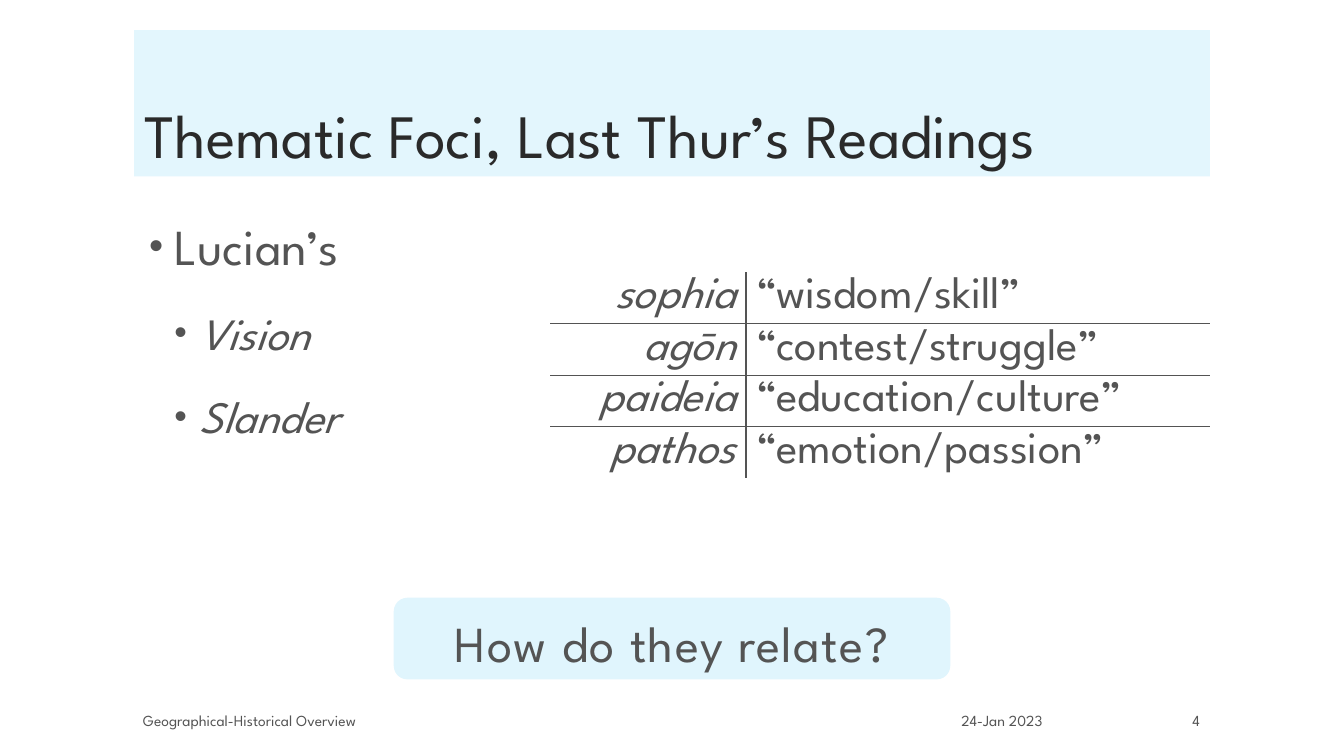
from lxml import etree
from pptx import Presentation
from pptx.dml.color import RGBColor
from pptx.enum.shapes import MSO_SHAPE
from pptx.enum.text import MSO_ANCHOR, MSO_AUTO_SIZE, PP_ALIGN
from pptx.oxml.ns import qn
from pptx.util import Inches, Pt

TITLE = "Thematic Foci, Last Thur’s Readings"
READINGS = [("Lucian’s", 0), ("Vision", 1), ("Slander", 1)]
TERMS = [
    ("sophia", "“wisdom/skill”"),
    ("agōn", "“contest/struggle”"),
    ("paideia", "“education/culture”"),
    ("pathos", "“emotion/passion”"),
]
QUESTION = "How do they relate?"

LEFT, RIGHT = PP_ALIGN.LEFT, PP_ALIGN.RIGHT
CENTER = PP_ALIGN.CENTER
TOP, MIDDLE, BOTTOM = MSO_ANCHOR.TOP, MSO_ANCHOR.MIDDLE, MSO_ANCHOR.BOTTOM
RECTANGLE_ROUNDED = MSO_SHAPE.ROUNDED_RECTANGLE
NO_FIT = MSO_AUTO_SIZE.NONE

FONT = "League Spartan"
GREY = RGBColor(0x54, 0x54, 0x54)
INK = RGBColor(0x2A, 0x2A, 0x2A)
SKY = RGBColor(0x00, 0xB0, 0xF0)

WIDTH, HEIGHT = 13.33, 7.5
MARGIN = 1.33
CONTENT = WIDTH - 2 * MARGIN
TERM_WIDTH, MEANING_WIDTH, ROW_HEIGHT = 1.94, 4.6, 0.51
TABLE_WIDTH = TERM_WIDTH + MEANING_WIDTH
QUESTION_WIDTH = 5.52
FOOTER_TOP, FOOTER_HEIGHT = 7.05, 0.2

FOOTERS = [
    ("Geographical-Historical Overview", MARGIN - 0.01, 7.26, LEFT),
    ("24-Jan 2023", 8.91, 1.53, RIGHT),
    ("4", 10.75, 1.25, RIGHT),
]


def apply(target, **values):
    for name, value in values.items():
        setattr(target, name, value)


def place(shape, left, top, width, height):
    apply(shape, left=Inches(left), top=Inches(top),
          width=Inches(width), height=Inches(height))


def write(paragraph, text, size, color=GREY, italic=False, **layout):
    run = paragraph.add_run()
    run.text = text
    apply(run.font, name=FONT, size=Pt(size), italic=italic)
    run.font.color.rgb = color
    apply(paragraph, **layout)
    return run


def tint(shape, percent):
    shape.fill.solid()
    shape.fill.fore_color.rgb = SKY
    color = shape.fill._xPr.find(".//" + qn("a:srgbClr"))
    etree.SubElement(color, qn("a:alpha"), val=str(percent * 1000))


def bullet(paragraph, indent):
    props = paragraph._p.get_or_add_pPr()
    props.set("marL", str(Inches(indent)))
    props.set("indent", str(Inches(-0.25)))
    color = etree.SubElement(props, qn("a:buClr"))
    etree.SubElement(color, qn("a:srgbClr"), val=str(GREY))
    etree.SubElement(props, qn("a:buSzPct"), val="80000")
    etree.SubElement(props, qn("a:buFont"), typeface="Arial")
    etree.SubElement(props, qn("a:buChar"), char="•")


def border(cell, drawn_sides):
    props = cell._tc.get_or_add_tcPr()
    for position, side in enumerate(("lnL", "lnR", "lnT", "lnB")):
        line = etree.Element(qn("a:" + side), w=str(Pt(1)))
        if side in drawn_sides:
            fill = etree.SubElement(line, qn("a:solidFill"))
            etree.SubElement(fill, qn("a:srgbClr"), val=str(GREY))
        else:
            etree.SubElement(line, qn("a:noFill"))
        props.insert(position, line)


def add_title(slide):
    title = slide.shapes.title
    place(title, MARGIN, 0.3, CONTENT, 1.45)
    tint(title, 11)
    apply(title.text_frame, vertical_anchor=BOTTOM, auto_size=NO_FIT, word_wrap=True)
    write(title.text_frame.paragraphs[0], TITLE, 44, INK,
          alignment=LEFT, line_spacing=0.9)


def add_readings(slide):
    body = slide.placeholders[1]
    place(body, MARGIN, 2, 2.97, 4.75)
    frame = body.text_frame
    apply(frame, vertical_anchor=TOP, auto_size=NO_FIT, word_wrap=True)
    for index, (reading, level) in enumerate(READINGS):
        paragraph = frame.add_paragraph() if index else frame.paragraphs[0]
        write(paragraph, reading, 32 if level else 36, italic=level > 0,
              level=level, line_spacing=1.14,
              space_before=Pt(6 if level else 18), space_after=Pt(10))
        bullet(paragraph, 0.3 + 0.25 * level)


def add_terms(slide):
    frame = slide.shapes.add_table(
        len(TERMS), 2, Inches(WIDTH - MARGIN - TABLE_WIDTH), Inches(2.7),
        Inches(TABLE_WIDTH), Inches(ROW_HEIGHT * len(TERMS)))
    table = frame.table
    apply(table, first_row=False, horz_banding=False)
    for column, width in zip(table.columns, (TERM_WIDTH, MEANING_WIDTH)):
        column.width = Inches(width)
    for row, pair in enumerate(TERMS):
        table.rows[row].height = Inches(ROW_HEIGHT)
        for column, text in enumerate(pair):
            cell = table.cell(row, column)
            cell.fill.background()
            sides = {"lnL" if column else "lnR"}
            if row:
                sides.add("lnT")
            if row < len(TERMS) - 1:
                sides.add("lnB")
            border(cell, sides)
            write(cell.text_frame.paragraphs[0], text, 32, italic=column == 0,
                  alignment=LEFT if column else RIGHT)


def add_question(slide):
    question = slide.shapes.add_shape(
        RECTANGLE_ROUNDED, Inches((WIDTH - QUESTION_WIDTH) / 2), Inches(5.93),
        Inches(QUESTION_WIDTH), Inches(0.81))
    question.shadow.inherit = False
    question.line.fill.background()
    tint(question, 12)
    apply(question.text_frame, vertical_anchor=MIDDLE, word_wrap=False)
    run = write(question.text_frame.paragraphs[0], QUESTION, 36,
                alignment=CENTER, line_spacing=1.14)
    run.font._element.set("spc", "100")


def add_footers(slide):
    for text, left, width, alignment in FOOTERS:
        footer = slide.shapes.add_textbox(
            Inches(left), Inches(FOOTER_TOP), Inches(width), Inches(FOOTER_HEIGHT))
        apply(footer.text_frame, vertical_anchor=MIDDLE, word_wrap=True)
        write(footer.text_frame.paragraphs[0], text, 11, alignment=alignment)


def main():
    deck = Presentation()
    apply(deck, slide_width=Inches(WIDTH), slide_height=Inches(HEIGHT))
    slide = deck.slides.add_slide(deck.slide_layouts[1])
    add_title(slide)
    add_readings(slide)
    add_terms(slide)
    add_question(slide)
    add_footers(slide)
    deck.save("out.pptx")


if __name__ == "__main__":
    main()
